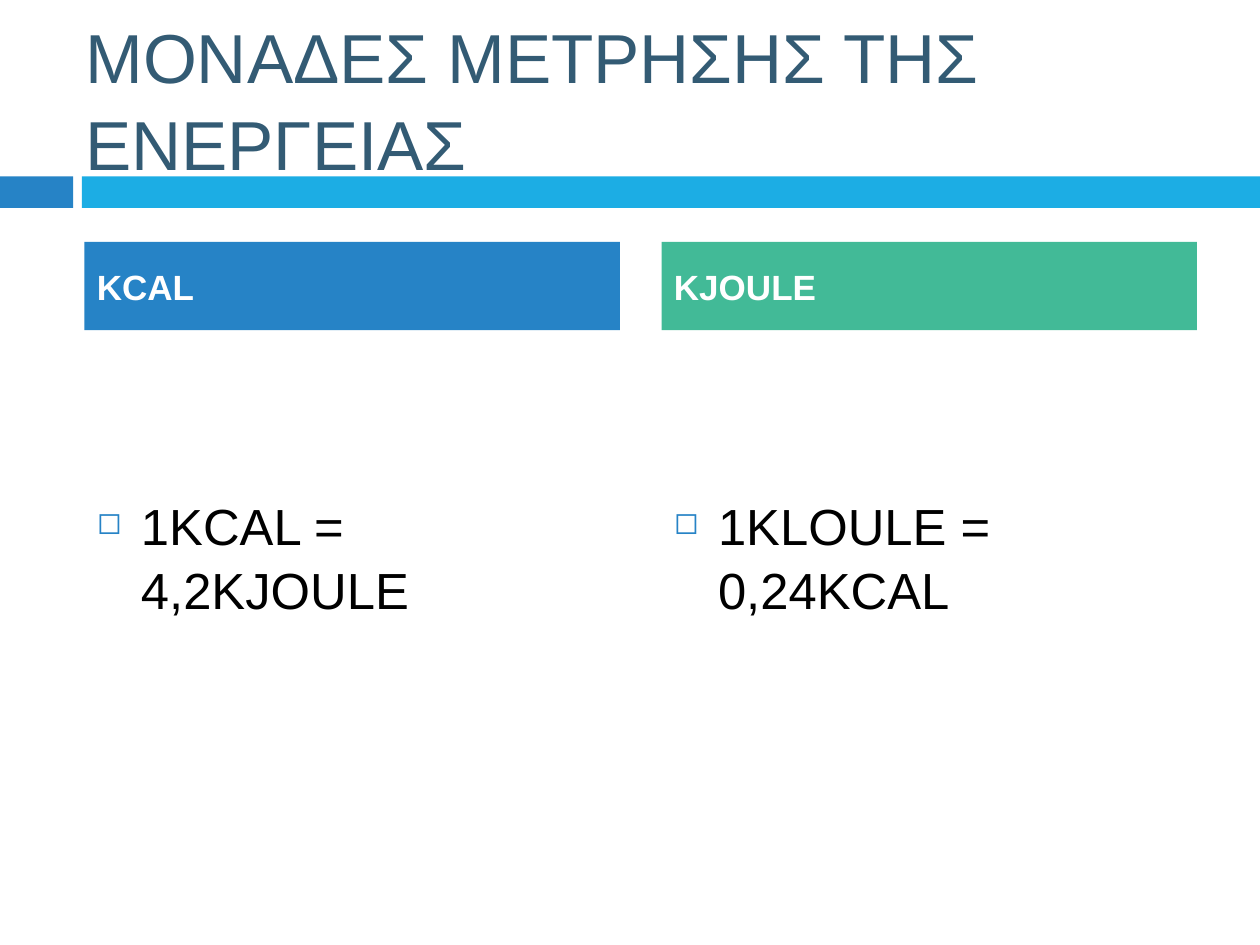
"""Build the slide on units of energy measurement."""
import pptx
import pptx.dml.color
import pptx.enum.shapes
import pptx.enum.text
import pptx.oxml
import pptx.oxml.ns
import pptx.util
from pptx.util import Inches

COLORS = {
    "blue": "2683C6",
    "sky": "1CADE4",
    "green": "42BA97",
    "title": "335B74",
    "body": "000000",
    "white": "FFFFFF",
}
COLUMNS = [
    (0.67, "KCAL", "blue", "1KCAL = 4,2KJOULE"),
    (5.25, "KJOULE", "green", "1KLOULE = 0,24KCAL"),
]
COLUMN_WIDTH = 4.25


def rgb(name):
    return pptx.dml.color.RGBColor.from_string(COLORS[name])


def add_bar(page, left, top, width, height, color):
    bar = page.shapes.add_shape(
        pptx.enum.shapes.MSO_SHAPE.RECTANGLE,
        Inches(left), Inches(top), Inches(width), Inches(height))
    bar.shadow.inherit = False
    bar.fill.solid()
    bar.fill.fore_color.rgb = rgb(color)
    bar.line.fill.background()
    return bar


def add_box(page, left, top, width, height):
    return page.shapes.add_textbox(
        Inches(left), Inches(top), Inches(width), Inches(height))


def write(box, text, size, color, bold=False, middle=True, spacing=None, inset=0.05):
    frame = box.text_frame
    frame.word_wrap = True
    frame.margin_top = Inches(inset)
    anchor = pptx.enum.text.MSO_ANCHOR
    frame.vertical_anchor = anchor.MIDDLE if middle else anchor.TOP
    para = frame.paragraphs[0]
    para.alignment = pptx.enum.text.PP_ALIGN.LEFT
    para.line_spacing = spacing
    span = para.add_run()
    span.text = text
    span.font.name = "Arial"
    span.font.size = pptx.util.Pt(size)
    span.font.bold = bold
    span.font.color.rgb = rgb(color)
    return para


def add_bullet(para, mark, color, percent, indent):
    properties = para._p.get_or_add_pPr()
    properties.set("marL", str(Inches(indent)))
    properties.set("indent", str(-Inches(indent)))
    namespace = pptx.oxml.ns.nsdecls("a")
    for xml in (
        f'<a:buClr {namespace}><a:srgbClr val="{COLORS[color]}"/></a:buClr>',
        f'<a:buSzPct {namespace} val="{percent * 1000}"/>',
        f'<a:buChar {namespace} char="{mark}"/>',
    ):
        properties.append(pptx.oxml.parse_xml(xml))


def add_column(page, left, heading, color, fact):
    body = add_box(page, left, 2.67, COLUMN_WIDTH, 3.92)
    para = write(body, fact, 29, "body", middle=False, spacing=1.04, inset=1.24)
    add_bullet(para, "◻", "blue", 60, 0.35)
    header = add_bar(page, left, 1.92, COLUMN_WIDTH, 0.7, color)
    write(header, heading, 20, "white", bold=True)


def main():
    deck = pptx.Presentation()
    deck.slide_width, deck.slide_height = Inches(10), Inches(7.5)
    page = deck.slides.add_slide(deck.slide_layouts[6])
    add_bar(page, 0, 1.4, 0.58, 0.25, "blue")
    add_bar(page, 0.65, 1.4, 9.35, 0.25, "sky")
    title = add_box(page, 0.58, 0.3, 8.92, 0.95)
    write(title, "ΜΟΝΑΔΕΣ ΜΕΤΡΗΣΗΣ ΤΗΣ ΕΝΕΡΓΕΙΑΣ", 39.6, "title", spacing=1.04)
    for column in COLUMNS:
        add_column(page, *column)
    deck.save("out.pptx")


if __name__ == "__main__":
    main()
